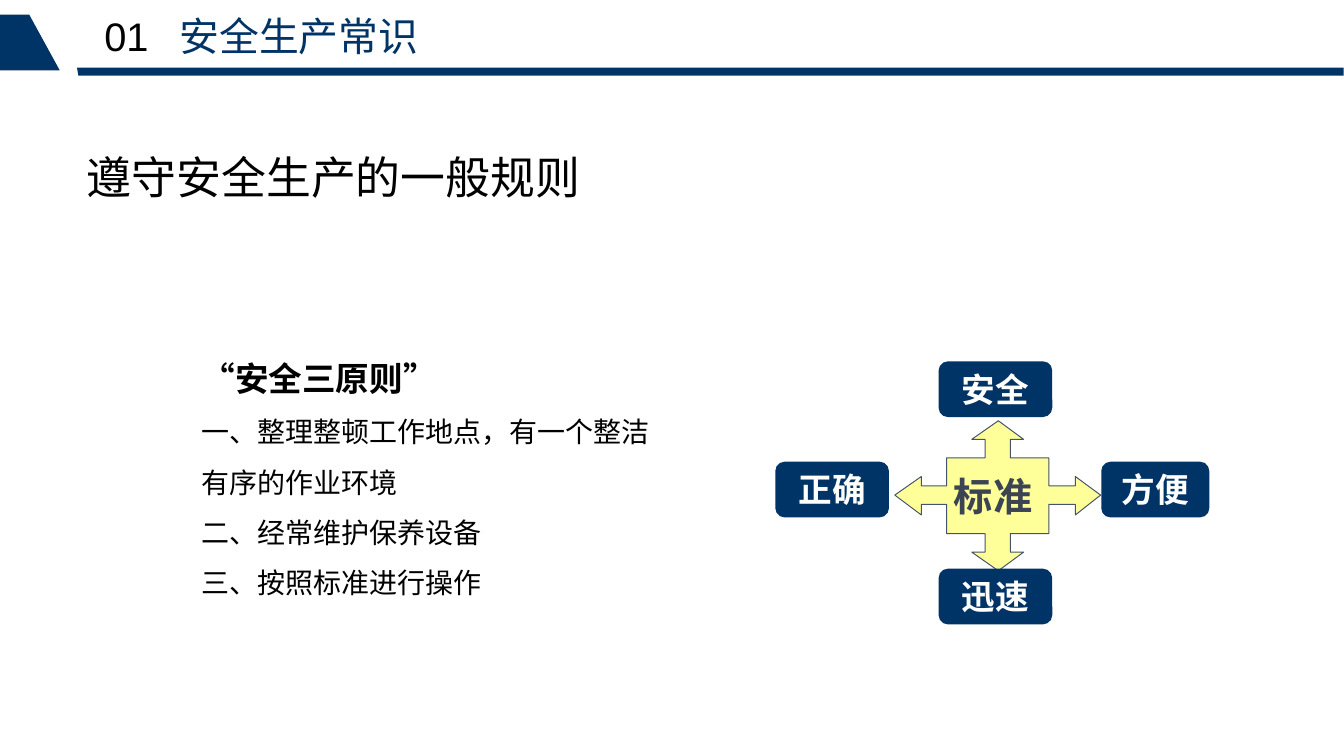
"""Build the slide on general rules of safe production."""
from lxml import etree
from pptx import Presentation, util as u
from pptx.dml.color import RGBColor
from pptx.enum import shapes, text
from pptx.oxml.ns import qn

HEAD = ("01", "安全生产常识")
TITLE = "遵守安全生产的一般规则"
RULES = ["“安全三原则”", "一、整理整顿工作地点，有一个整洁有序的作业环境",
         "二、经常维护保养设备", "三、按照标准进行操作"]
HUB = "标准"
GOALS = [("安全", 707, 272.2, 85.6), ("正确", 584, 347.8, 85.6),
         ("方便", 829.5, 347.8, 81.4), ("迅速", 707, 428.4, 85.6)]
GOAL_H = 42

THEME = dict(navy="003366", ink="000000", pale="FFFF99", edge="44546A",
             slate="3B4453", white="FFFFFF", cjk="Noto Sans CJK SC",
             latin="Arial", head=30, title=33.8, lead=25.3, body=21.1, hub=29.6)

HUB_MID = (751.7, 373.4)
STEP = (9.7, 7.1)
ARM = [(0, -8), (2, -6), (1, -6), (1, -4), (4, -4), (4, -1), (6, -1), (6, -2)]
BANNER = [[(0, 10.8), (22.5, 10.8), (45.2, 53.3), (0, 53.3)],
          [(57.8, 51), (1012.3, 51), (1012.3, 56.9), (59, 56.9)]]

deck = Presentation()
deck.slide_width, deck.slide_height = u.Pt(1012.32), u.Pt(569.52)
slide = deck.slides.add_slide(deck.slide_layouts[6])


def rgb(key):
    return RGBColor.from_string(THEME[key])


def style(font, size, color, bold=False, face="cjk"):
    font.size, font.bold = u.Pt(THEME[size]), bold
    font.color.rgb = rgb(color)
    font.name = THEME[face]
    etree.SubElement(font._element, qn("a:ea"), typeface=THEME["cjk"])


def paint(shape, fill, line=None):
    shape.shadow.inherit = False
    shape.fill.solid()
    shape.fill.fore_color.rgb = rgb(fill)
    if line:
        shape.line.color.rgb = rgb(line)
        shape.line.width = u.Pt(0.75)
    else:
        shape.line.fill.background()


def outline(dots, fill, line=None):
    pen = slide.shapes.build_freeform(*dots[0], scale=u.Pt(1))
    pen.add_line_segments(dots[1:], close=True)
    shape = pen.convert_to_shape()
    paint(shape, fill, line)
    return shape


def box(*area):
    frame = slide.shapes.add_textbox(*map(u.Pt, area)).text_frame
    frame.word_wrap = True
    return frame


def label(shape, words, size, color):
    frame = shape.text_frame
    frame.word_wrap = False
    frame.vertical_anchor = text.MSO_ANCHOR.MIDDLE
    para = frame.paragraphs[0]
    para.text, para.alignment = words, text.PP_ALIGN.CENTER
    style(para.font, size, color, True)
    return frame


def turn(dot, count):
    for _ in range(count):
        dot = (-dot[1], dot[0])
    return dot


for dots in BANNER:
    outline(dots, "navy")

frame = box(45.4, 8.6, 650, 36)
frame.margin_left = u.Pt(33.2)
frame.margin_top = frame.margin_right = frame.margin_bottom = 0
para = frame.paragraphs[0]
tabs = etree.SubElement(para._p.get_or_add_pPr(), qn("a:tabLst"))
etree.SubElement(tabs, qn("a:tab"), pos=str(u.Pt(56.6)), algn="l")
for words, color, face in ((HEAD[0] + "\t", "ink", "latin"), (HEAD[1], "navy", "cjk")):
    run = para.add_run()
    run.text = words
    style(run.font, "head", color, face=face)

frame = box(58.3, 108.7, 390.2, 48.2)
frame.vertical_anchor = text.MSO_ANCHOR.MIDDLE
para = frame.paragraphs[0]
para.text = TITLE
style(para.font, "title", "ink")

frame = box(144.7, 250.6, 361.4, 202.3)
frame.text = "\n".join(RULES)
for num, para in enumerate(frame.paragraphs):
    para.line_spacing = 1.5
    style(para.font, "body" if num else "lead", "ink", num == 0)

cross = [tuple(mid + step * val for mid, step, val in zip(HUB_MID, STEP, turn(dot, side)))
         for side in range(4) for dot in ARM]
frame = label(outline(cross, "pale", "edge"), HUB, "hub", "slate")
frame.margin_right = u.Pt(14)

for words, left, top, wide in GOALS:
    goal = slide.shapes.add_shape(shapes.MSO_SHAPE.ROUNDED_RECTANGLE,
                                  *map(u.Pt, (left, top, wide, GOAL_H)))
    paint(goal, "navy")
    label(goal, words, "lead", "white")

deck.save("out.pptx")
